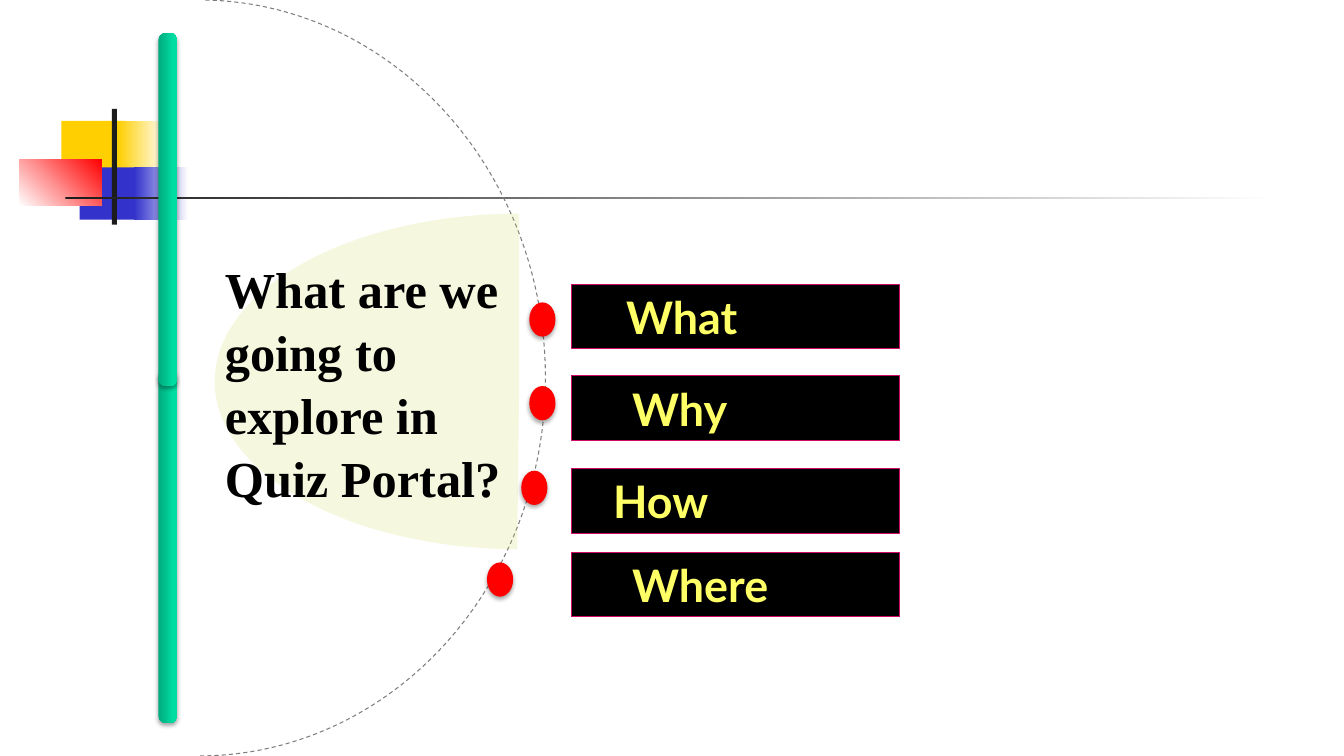
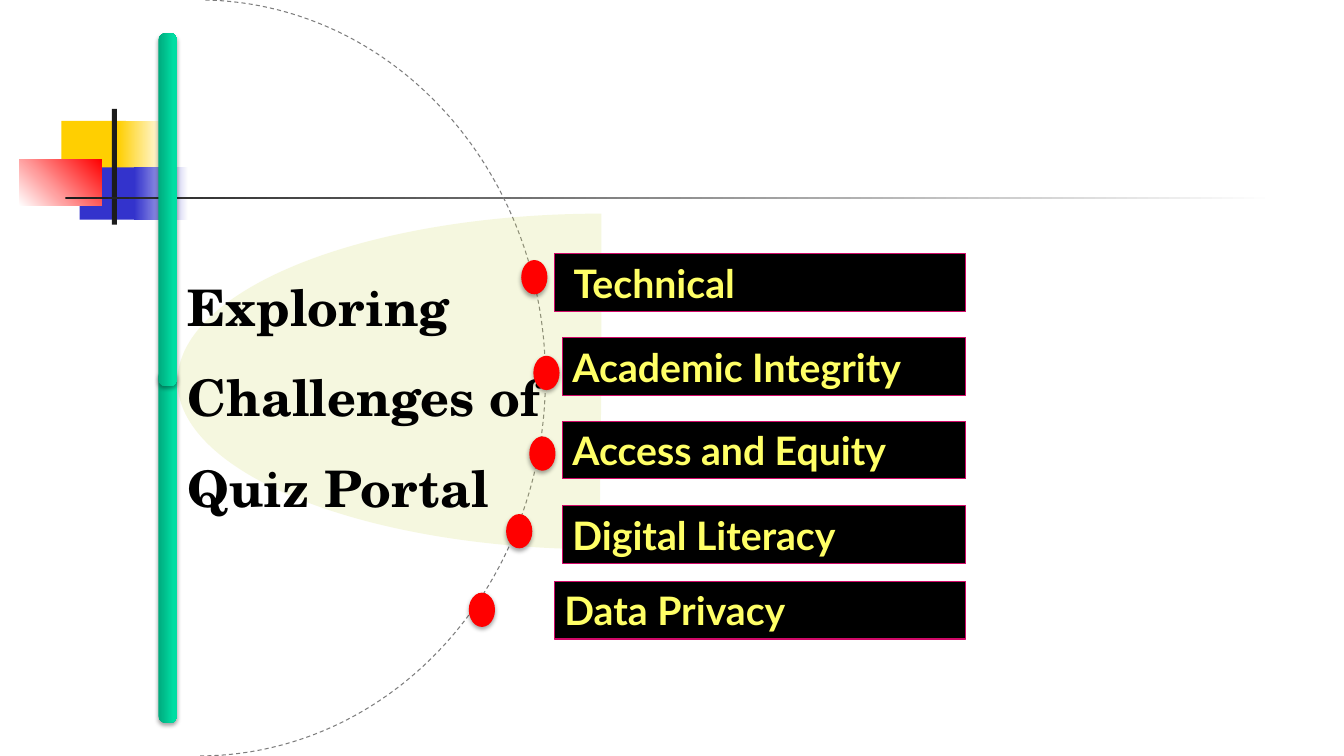
"""Build two agenda slides that share a decorated master."""
from dataclasses import dataclass
from typing import Optional

from lxml.etree import SubElement
from pptx import Presentation
from pptx.dml.color import RGBColor
from pptx.enum.dml import MSO_LINE_DASH_STYLE as Dash
from pptx.enum.shapes import MSO_AUTO_SHAPE_TYPE as Kind
from pptx.enum.text import MSO_ANCHOR as Anchor, PP_ALIGN as Align
from pptx.oxml.ns import qn
from pptx.presentation import Presentation as Deck
from pptx.shapes.autoshape import Shape
from pptx.slide import Slide
from pptx.util import Inches, Pt


@dataclass(frozen=True)
class Theme:
    """Colours, fonts and type sizes of the deck."""
    white: str = "FFFFFF"
    ink: str = "1C1C1C"
    black: str = "000000"
    yellow: str = "FFCF01"
    blue: str = "3333CC"
    red: str = "FF0000"
    orbit: str = "7D7D7D"
    leaf: str = "D1DA60"
    bar_dark: str = "00AA7D"
    bar_light: str = "00DDA3"
    label_edge: str = "D10968"
    label_text: str = "FFFF66"
    label_font: str = "Lato"
    title_size: int = 36


@dataclass(frozen=True)
class Area:
    """A rectangle in inches."""
    left: float
    top: float
    width: float
    height: float


@dataclass(frozen=True)
class Patch:
    """A master block, plain or fading from one colour to another."""
    area: Area
    color: str
    fade_to: Optional[str] = None
    angle: int = 0


@dataclass(frozen=True)
class Label:
    """A black label and the indent of its text."""
    text: str
    left: float
    top: float
    indent: float = 0


@dataclass(frozen=True)
class Agenda:
    """The content and measures of one slide."""
    title: str
    title_font: str
    title_spacing: float
    leaf_left: float
    leaf_width: float
    label_right: float
    label_height: float
    label_size: int
    labels: tuple[Label, ...]
    dots: tuple[tuple[float, float], ...]


THEME = Theme()
PATCHES = (
    Patch(Area(0.61, 1.2, 0.64, 0.52), THEME.yellow),
    Patch(Area(1.17, 1.2, 0.48, 0.52), THEME.yellow, THEME.white),
    Patch(Area(0.79, 1.66, 0.62, 0.52), THEME.blue),
    Patch(Area(1.33, 1.66, 0.54, 0.52), THEME.blue, THEME.white),
    Patch(Area(0.19, 1.58, 0.82, 0.46), THEME.white, THEME.red, 45),
    Patch(Area(1.11, 1.08, 0.05, 1.15), THEME.ink),
    Patch(Area(0.65, 1.95, 12, 0.03), THEME.ink, THEME.white),
)
AGENDAS = (
    Agenda(
        "What are we going to explore in Quiz Portal?", "Times New Roman", 1.04,
        2.13, 6.04, 8.92, 0.64, 32,
        (Label("What", 5.67, 2.82, 0.44), Label("Why", 5.67, 3.73, 0.5),
         Label("How", 5.67, 4.65, 0.31), Label("Where", 5.67, 5.48, 0.5)),
        ((5.25, 3), (5.25, 3.83), (5.17, 4.67), (4.83, 5.58)),
    ),
    Agenda(
        "Exploring Challenges of Quiz Portal", "TeX Gyre Schola", 1.5,
        1.76, 8.41, 9.58, 0.57, 28,
        (Label("Technical", 5.5, 2.52, 0.09), Label("Academic Integrity", 5.58, 3.35),
         Label("Access and Equity", 5.58, 4.18), Label("Digital Literacy", 5.58, 5.02),
         Label("Data Privacy", 5.5, 5.77)),
        ((5.17, 2.58), (5.29, 3.53), (5.25, 4.33), (5.02, 5.1), (4.65, 5.88)),
    ),
)


def place(shape: Shape, area: Area) -> None:
    """Move and size a shape."""
    shape.left, shape.top = Inches(area.left), Inches(area.top)
    shape.width, shape.height = Inches(area.width), Inches(area.height)


def add_plain(page: Slide, kind: Kind, area: Area, color: Optional[str] = None) -> Shape:
    """Add a shape without line or shadow, filled if a colour is given."""
    shape = page.shapes.add_shape(kind, 0, 0, 0, 0)
    place(shape, area)
    shape.shadow.inherit = False
    shape.line.fill.background()
    if color:
        shape.fill.solid()
        shape.fill.fore_color.rgb = RGBColor.from_string(color)
    else:
        shape.fill.background()
    return shape


def fade(shape: Shape, start: str, end: str, angle: int = 0, reach: float = 1) -> None:
    """Give a shape a linear gradient that ends at a share of its length."""
    shape.fill.gradient()
    shape.fill.gradient_angle = angle
    for stop, color, position in zip(shape.fill.gradient_stops, (start, end), (0, reach)):
        stop.color.rgb = RGBColor.from_string(color)
        stop.position = position


def outline(shape: Shape, color: str) -> None:
    """Give a shape a thin line."""
    shape.line.color.rgb = RGBColor.from_string(color)
    shape.line.width = Pt(0.75)


def set_alpha(parent, percent: int) -> None:
    """Set the opacity of a colour element."""
    SubElement(parent, qn("a:alpha"), val=str(percent * 1000))


def drop_shadow(shape: Shape) -> None:
    """Add a soft shadow below a shape."""
    effects = shape.element.spPr.find(qn("a:effectLst"))
    shadow = SubElement(effects, qn("a:outerShdw"), blurRad=str(Pt(3.1)),
                        dist=str(Pt(1.8)), dir="5400000", rotWithShape="0")
    set_alpha(SubElement(shadow, qn("a:srgbClr"), val=THEME.black), 35)


def decorate_master(deck: Deck, page: Slide) -> None:
    """Draw the patches and hand them to the slide master."""
    tree = deck.slide_master.shapes.element
    for index, patch in enumerate(PATCHES):
        shape = add_plain(page, Kind.RECTANGLE, patch.area, patch.color)
        if patch.fade_to:
            fade(shape, patch.color, patch.fade_to, patch.angle)
        tree.insert(2 + index, shape.element)


def add_orbit(page: Slide) -> None:
    """Add the dashed half circle."""
    orbit = add_plain(page, Kind.ARC, Area(-1.46, 0, 6.87, 7.5))
    orbit.adjustments[0], orbit.adjustments[1] = 162.58, 54.07
    outline(orbit, THEME.orbit)
    orbit.line.dash_style = Dash.DASH


def add_title(page: Slide, agenda: Agenda) -> None:
    """Add the pale leaf with the title over it."""
    leaf = add_plain(page, Kind.ARC, Area(agenda.leaf_left, 2.12, agenda.leaf_width, 3.33),
                     THEME.leaf)
    leaf.adjustments[0], leaf.adjustments[1] = 54.4, 162
    set_alpha(leaf.element.spPr.find(f"{qn('a:solidFill')}/{qn('a:srgbClr')}"), 20)

    title = page.shapes.title
    place(title, Area(agenda.leaf_left, 2.12, agenda.leaf_width / 2, 3.33))
    page.shapes.element.append(title.element)
    frame = title.text_frame
    frame.text = agenda.title
    frame.word_wrap = True
    frame.vertical_anchor = Anchor.MIDDLE
    para = frame.paragraphs[0]
    para.alignment = Align.LEFT
    para.line_spacing = agenda.title_spacing
    style_font(para.font, agenda.title_font, THEME.title_size, THEME.black)


def style_font(font, name: str, size: int, color: str) -> None:
    """Set a bold font."""
    font.name, font.size, font.bold = name, Pt(size), True
    font.color.rgb = RGBColor.from_string(color)


def add_bars(page: Slide) -> None:
    """Add the two green bars, the upper one in front."""
    for top in (3.67, 0.33):
        bar = add_plain(page, Kind.ROUNDED_RECTANGLE, Area(1.57, top, 0.19, 3.5))
        bar.adjustments[0] = 0.35
        fade(bar, THEME.bar_dark, THEME.bar_light, reach=0.8)
        drop_shadow(bar)


def add_label(page: Slide, agenda: Agenda, label: Label) -> None:
    """Add one black label."""
    area = Area(label.left, label.top, agenda.label_right - label.left, agenda.label_height)
    box = add_plain(page, Kind.RECTANGLE, area, THEME.black)
    outline(box, THEME.label_edge)
    frame = box.text_frame
    frame.text = label.text
    frame.word_wrap = True
    frame.vertical_anchor = Anchor.MIDDLE
    frame.margin_left = Inches(0.1 + label.indent)
    para = frame.paragraphs[0]
    para.alignment = Align.LEFT
    style_font(para.font, THEME.label_font, agenda.label_size, THEME.label_text)


def fill_page(page: Slide, agenda: Agenda) -> None:
    """Draw one agenda slide."""
    add_orbit(page)
    add_title(page, agenda)
    add_bars(page)
    for left, top in agenda.dots:
        drop_shadow(add_plain(page, Kind.OVAL, Area(left, top, 0.26, 0.34), THEME.red))
    for label in agenda.labels:
        add_label(page, agenda, label)


def main() -> None:
    """Build and save the deck."""
    deck = Presentation()
    deck.slide_width, deck.slide_height = Inches(13.33), Inches(7.5)
    title_only = deck.slide_layouts.get_by_name("Title Only")
    pages = [deck.slides.add_slide(title_only) for _ in AGENDAS]
    decorate_master(deck, pages[0])
    for page, agenda in zip(pages, AGENDAS):
        fill_page(page, agenda)
    deck.save("out.pptx")


if __name__ == "__main__":
    main()
